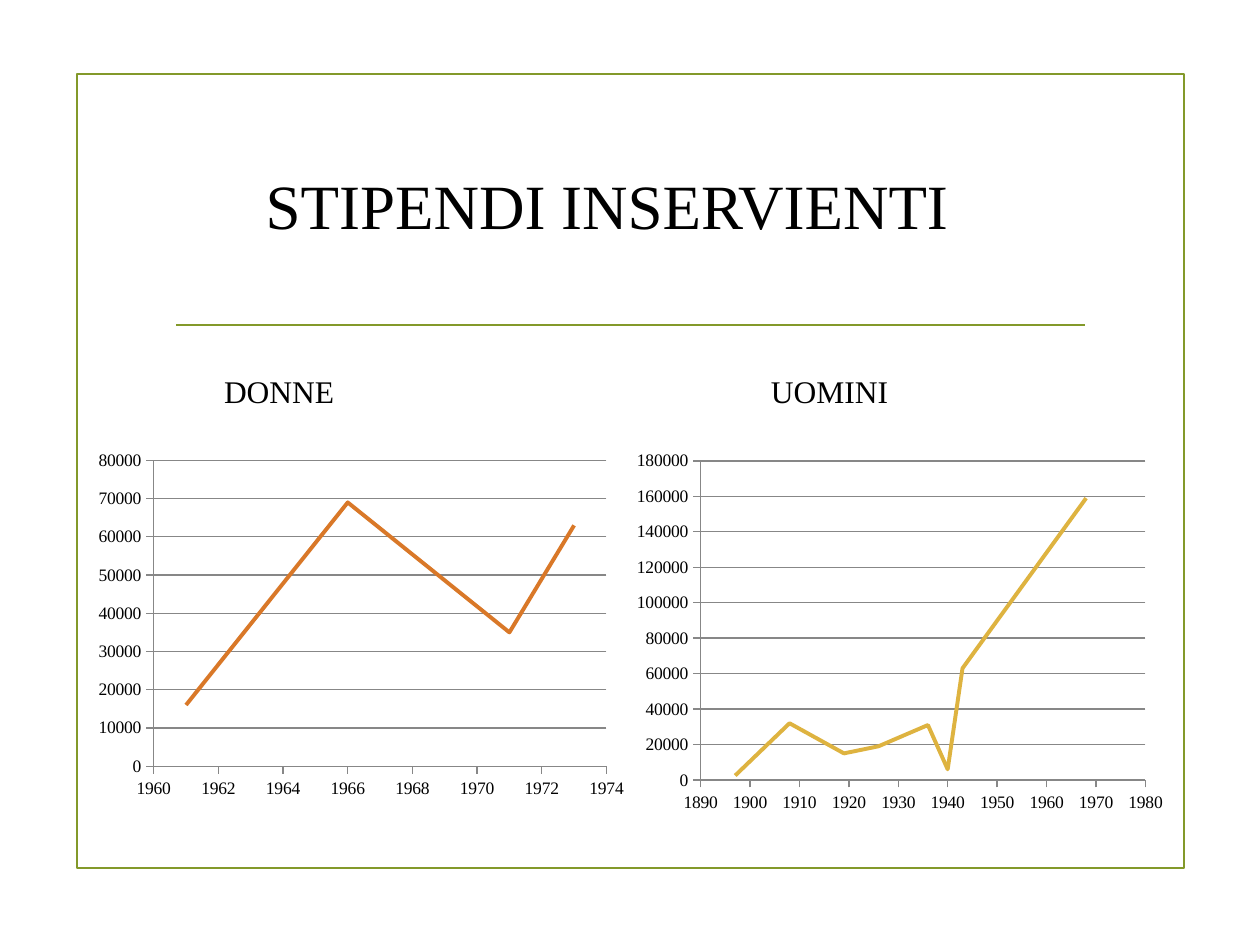
from collections import namedtuple

from lxml.etree import SubElement
from pptx import Presentation
from pptx.chart.data import XyChartData
from pptx.dml.color import RGBColor
from pptx.enum.chart import XL_CHART_TYPE, XL_TICK_MARK
from pptx.enum.shapes import MSO_CONNECTOR, MSO_SHAPE
from pptx.oxml import parse_xml
from pptx.oxml.ns import nsdecls, qn
from pptx.util import Inches, Pt

OLIVE = RGBColor(0x83, 0x99, 0x2A)
ORANGE = RGBColor(0xD9, 0x78, 0x28)
GOLD = RGBColor(0xDE, 0xB3, 0x40)
GRAY = RGBColor(0x87, 0x87, 0x87)
BLACK = RGBColor(0, 0, 0)
FONT = "Times New Roman"

WIDTH, HEIGHT = Inches(10), Inches(7.5)
COLUMNS, ROWS = 100, 75

Box = namedtuple("Box", "column row columns rows")
Scale = namedtuple("Scale", "low high step")
Salaries = namedtuple("Salaries", "label points years pay color plot")

WOMEN = Salaries(
    "DONNE",
    [(1961, 16000), (1966, 69000), (1971, 35000), (1973, 63000)],
    Scale(1960, 1974, 2), Scale(0, 80000, 10000), ORANGE,
    (0.12, 0.05, 0.83, 0.84),
)
MEN = Salaries(
    "UOMINI",
    [(1897, 2500), (1908, 32000), (1919, 15000), (1926, 19000),
     (1936, 31000), (1940, 6000), (1943, 63000), (1968, 159000)],
    Scale(1890, 1980, 10), Scale(0, 180000, 20000), GOLD,
    (0.14, 0.05, 0.81, 0.85),
)


def place(box):
    """Turn a grid box into left, top, width and height."""
    across, down = WIDTH / COLUMNS, HEIGHT / ROWS
    return (round(box.column * across), round(box.row * down),
            round(box.columns * across), round(box.rows * down))


def add_text(slide, box, text, size=18, color=BLACK, font=FONT):
    """Write one line of text in the box."""
    frame = slide.shapes.add_textbox(*place(box)).text_frame
    frame.word_wrap = True
    run = frame.paragraphs[0].add_run()
    run.text = text
    run.font.size = Pt(size)
    run.font.name = font
    run.font.color.rgb = color


def add_frame(slide, box):
    """Draw the border and the rule under the heading."""
    border = slide.shapes.add_shape(MSO_SHAPE.RECTANGLE, *place(box))
    border.shadow.inherit = False
    border.fill.background()
    left, top, width, _ = place(Box(box.column + 7.9, box.row + 19.9, 72.1, 0))
    rule = slide.shapes.add_connector(
        MSO_CONNECTOR.STRAIGHT, left, top, left + width, top)
    SubElement(rule._element.spPr, qn("a:effectLst"))
    for outline in (border.line, rule.line):
        outline.color.rgb = OLIVE
        outline.width = Pt(1.25)


def style_axis(axis, scale, grid):
    """Give an axis its range, ticks, labels and gridlines."""
    axis.minimum_scale, axis.maximum_scale, axis.major_unit = scale
    axis.major_tick_mark = XL_TICK_MARK.OUTSIDE
    axis.minor_tick_mark = XL_TICK_MARK.NONE
    axis.has_major_gridlines = grid
    axis.tick_labels.font.size = Pt(10)
    lines = [axis.format.line]
    if grid:
        lines.append(axis.major_gridlines.format.line)
    for line in lines:
        line.color.rgb = GRAY
        line.width = Pt(0.75)


def fix_plot(chart, shares):
    """Set the inner plot area as shares of the chart."""
    sides = "".join(f'<c:{side}Mode val="edge"/>' for side in "xy")
    sides += "".join(f'<c:{side} val="{share}"/>'
                     for side, share in zip("xywh", shares))
    layout = parse_xml(
        f'<c:layout {nsdecls("c")}><c:manualLayout>'
        f'<c:layoutTarget val="inner"/>{sides}</c:manualLayout></c:layout>')
    area = chart._chartSpace.chart.plotArea
    for previous in area.findall(qn("c:layout")):
        area.remove(previous)
    area.insert(0, layout)


def add_salaries(slide, box, salaries, indent, label_columns):
    """Place a label and its smooth salary curve in the box."""
    add_text(slide, Box(box.column + indent, box.row, label_columns, 4),
             salaries.label)
    data = XyChartData()
    series = data.add_series(salaries.label)
    for year, pay in salaries.points:
        series.add_data_point(year, pay)
    chart_box = Box(box.column, box.row + 6.1, box.columns, box.rows - 6.1)
    chart = slide.shapes.add_chart(
        XL_CHART_TYPE.XY_SCATTER_SMOOTH_NO_MARKERS,
        *place(chart_box), data).chart
    chart.has_legend = False
    chart.has_title = False
    chart.font.name = FONT
    chart.font.size = Pt(18)
    chart.font.color.rgb = BLACK
    style_axis(chart.category_axis, salaries.years, False)
    style_axis(chart.value_axis, salaries.pay, True)
    fix_plot(chart, salaries.plot)
    chart.plots[0].vary_by_categories = False
    curve = chart.plots[0].series[0]
    curve.smooth = True
    curve.format.line.color.rgb = salaries.color
    curve.format.line.width = Pt(2.25)


def main():
    """Build and save the slide."""
    deck = Presentation()
    deck.slide_width, deck.slide_height = WIDTH, HEIGHT
    slide = deck.slides.add_slide(deck.slide_layouts[6])
    add_frame(slide, Box(6.1, 5.9, 87.9, 63))
    add_text(slide, Box(20.1, 12.7, 58.8, 7.1), "STIPENDI INSERVIENTI", size=36)
    add_salaries(slide, Box(7, 29, 43.3, 35), WOMEN, 9.8, 21.3)
    add_salaries(slide, Box(49.5, 29, 43.6, 35.9), MEN, 10.7, 22)
    deck.save("out.pptx")


if __name__ == "__main__":
    main()
